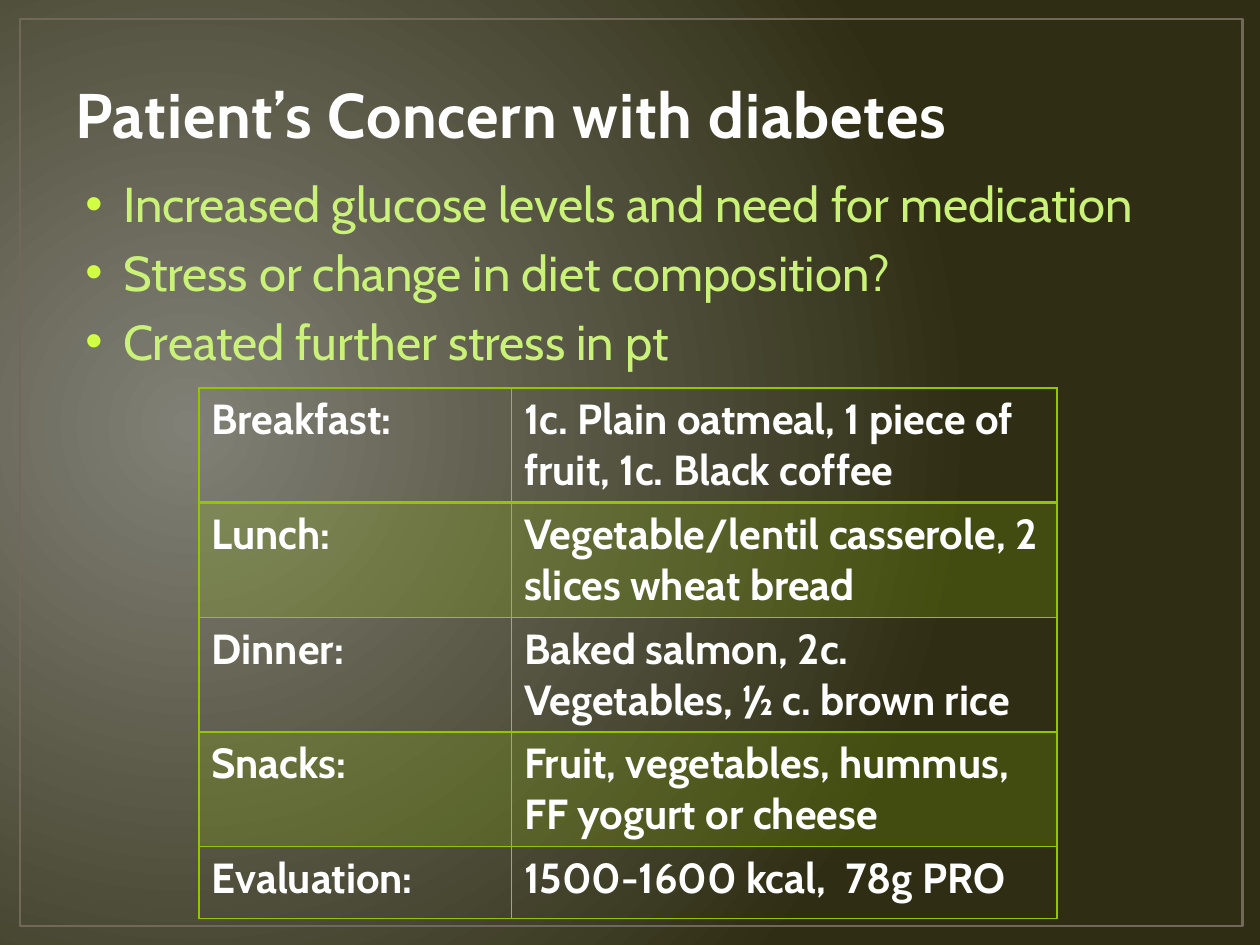
from lxml import etree
from pptx import Presentation
from pptx import util as u
from pptx.dml.color import RGBColor
from pptx.enum import shapes, text
from pptx.oxml import ns

GREY = RGBColor(0x81, 0x80, 0x76)
OLIVE = RGBColor(0x2F, 0x2E, 0x14)
FRAME = RGBColor(0x71, 0x68, 0x5A)
TITLE = RGBColor(0xFF, 0xFE, 0xFE)
BODY = RGBColor(0xCA, 0xF2, 0x78)
BULLET = RGBColor(0xD0, 0xFF, 0x44)
WHITE = RGBColor(0xFF, 0xFF, 0xFF)
GREEN = RGBColor(0x94, 0xC6, 0x00)

POINTS = [
    "Increased glucose levels and need for medication",
    "Stress or change in diet composition?",
    "Created further stress in pt",
]
MEALS = [
    ("Breakfast:", "1c. Plain oatmeal, 1 piece of fruit, 1c. Black coffee"),
    ("Lunch:", "Vegetable/lentil casserole, 2 slices wheat bread"),
    ("Dinner:", "Baked salmon, 2c. Vegetables, ½ c. brown rice"),
    ("Snacks:", "Fruit, vegetables, hummus, FF yogurt or cheese"),
    ("Evaluation:", "1500-1600 kcal,  78g PRO"),
]


def add(parent, tag, **attrs):
    return etree.SubElement(parent, ns.qn(tag), attrs)


def add_solid(parent, color):
    return add(add(parent, "a:solidFill"), "a:srgbClr", val=str(color))


class Deck:
    """Style and current slide; lengths are cells of a 100 x 75 grid."""
    font = "Cabin"
    cols, rows = 100, 75

    def __init__(self):
        self.prs = Presentation()
        self.prs.slide_width, self.prs.slide_height = u.Inches(10), u.Inches(7.5)
        self.s = self.prs.slides.add_slide(self.prs.slide_layouts[6])

    def x(self, n):
        return int(self.prs.slide_width * n / self.cols)

    def y(self, n):
        return int(self.prs.slide_height * n / self.rows)

    def box(self, left, top, width, height):
        return self.x(left), self.y(top), self.x(width), self.y(height)

    def background(self, inner, outer):
        fill = self.s.background.fill
        fill.gradient()
        for stop, color, pos in zip(fill.gradient_stops, (inner, outer), (0, 1)):
            stop.color.rgb, stop.position = color, pos
        grad = self.s.element.find(".//" + ns.qn("a:gradFill"))
        grad.remove(grad.find(ns.qn("a:lin")))
        path = add(grad, "a:path", path="circle")
        add(path, "a:fillToRect", l="15000", t="50000", r="85000", b="60000")

    def frame(self, *at):
        sp = self.s.shapes.add_shape(shapes.MSO_SHAPE.RECTANGLE, *self.box(*at))
        sp.shadow.inherit = False
        sp.fill.background()
        sp.line.color.rgb, sp.line.width = FRAME, u.Pt(1.5)

    def run(self, p, words, size, color, bold=False):
        r = p.add_run()
        r.text = words
        f = r.font
        f.name, f.size, f.bold, f.color.rgb = self.font, u.Pt(size), bold, color
        return r

    def text_frame(self, at, anchor):
        tf = self.s.shapes.add_textbox(*self.box(*at)).text_frame
        tf.word_wrap, tf.vertical_anchor = True, anchor
        return tf

    def title(self, words, *at):
        tf = self.text_frame(at, text.MSO_ANCHOR.BOTTOM)
        r = self.run(tf.paragraphs[0], words, 36, TITLE, True)
        r.font._element.set("spc", "50")

    def bullets(self, lines, *at):
        tf = self.text_frame(at, text.MSO_ANCHOR.TOP)
        for i, line in enumerate(lines):
            p = tf.add_paragraph() if i else tf.paragraphs[0]
            p.space_before = u.Pt(5.6)
            pPr = p._p.get_or_add_pPr()
            pPr.set("marL", str(self.x(3)))
            pPr.set("indent", str(-self.x(3)))
            add(add(pPr, "a:buClr"), "a:srgbClr", val=str(BULLET))
            add(pPr, "a:buFont", typeface="Arial")
            add(pPr, "a:buChar", char="•")
            self.run(p, line, 28, BODY)

    def cell(self, cell, words, banded, heavy):
        """Heavy names the sides that take the thick border."""
        self.run(cell.text_frame.paragraphs[0], words, 24, WHITE, True)
        tcPr = cell._tc.get_or_add_tcPr()
        for side in "LRTB":
            width = u.Pt(2 if side in heavy else 1)
            add_solid(add(tcPr, "a:ln" + side, w=str(width)), GREEN)
        if banded:
            add(add_solid(tcPr, GREEN), "a:alpha", val="20000")
        else:
            cell.fill.background()

    def table(self, data, left, top, widths, heights):
        at = self.box(left, top, sum(widths), sum(heights))
        tbl = self.s.shapes.add_table(len(data), len(widths), *at).table
        for col, width in zip(tbl.columns, widths):
            col.width = self.x(width)
        for i, (row, height) in enumerate(zip(data, heights)):
            tbl.rows[i].height = self.y(height)
            heavy = {0: "B", 1: "T"}.get(i, "")
            for j, words in enumerate(row):
                self.cell(tbl.cell(i, j), words, i % 2 == 1, heavy)


def main():
    d = Deck()
    # Backdrop
    d.background(GREY, OLIVE)
    d.frame(1.6, 1.5, 97, 72)
    # Heading and points
    d.title("Patient’s Concern with diabetes", 5, 1.7, 90, 10.8)
    d.bullets(POINTS, 5.8, 13.3, 90, 49.5)
    # Daily meals
    d.table(MEALS, 15.8, 30.8, [24.8, 43.3], [9.1] * 4 + [5.7])
    d.prs.save("out.pptx")


if __name__ == "__main__":
    main()
